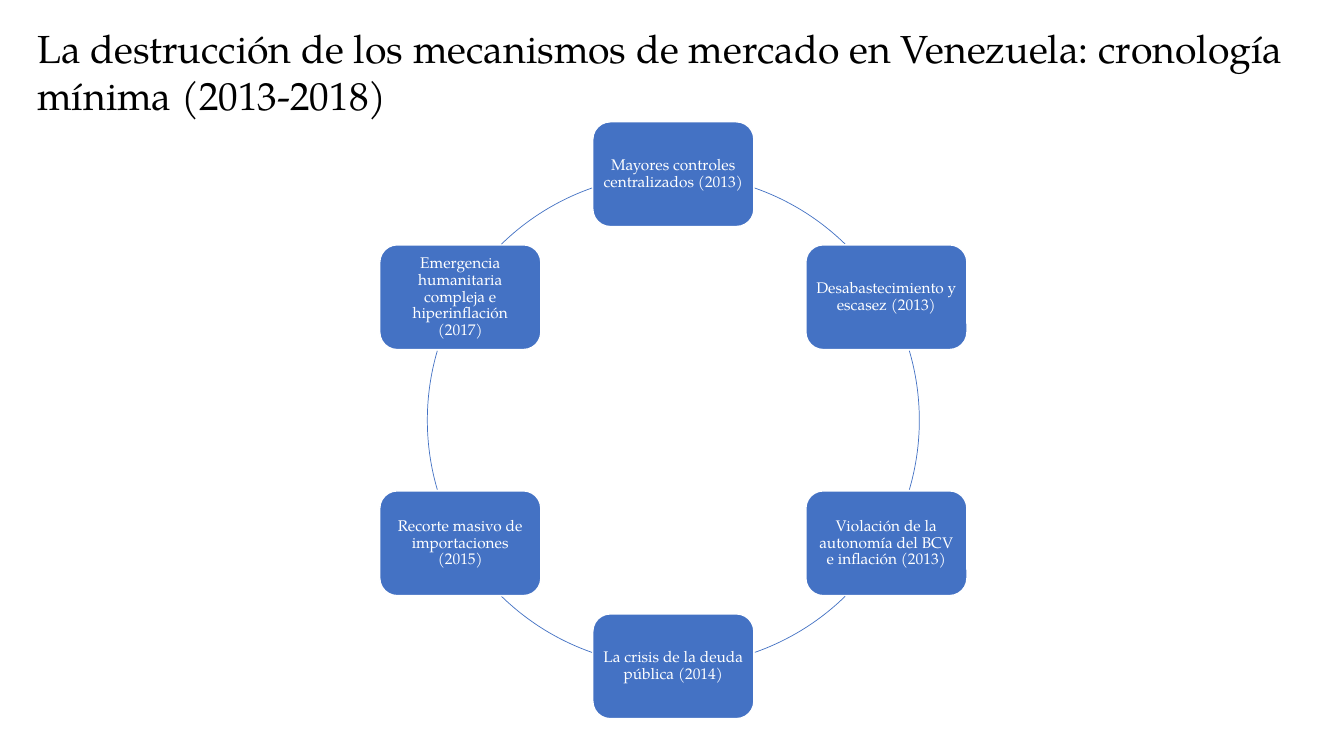
from math import cos, radians, sin

from pptx import Presentation
from pptx.dml.color import RGBColor
from pptx.enum.shapes import MSO_SHAPE as Shape
from pptx.enum.text import MSO_ANCHOR as Anchor, MSO_AUTO_SIZE as AutoSize, PP_ALIGN as Align
from pptx.util import Cm, Pt

COLORS = {"blue": "4472C4", "white": "FFFFFF", "black": "000000"}
FONT = "TeX Gyre Pagella"


def color(name):
    return RGBColor.from_string(COLORS[name])


def format_text(frame, size, color_name, align, anchor):
    frame.word_wrap = True
    frame.auto_size = AutoSize.NONE
    frame.vertical_anchor = anchor
    paragraph = frame.paragraphs[0]
    paragraph.alignment = align
    font = paragraph.runs[0].font
    font.name, font.size = FONT, Pt(size)
    font.color.rgb = color(color_name)


prs = Presentation()
prs.slide_width, prs.slide_height = Cm(33.87), Cm(19.05)
slide = prs.slides.add_slide(prs.slide_layouts[5])

# Title
title = slide.shapes.title
title.left, title.top, title.width, title.height = Cm(0.69), Cm(0.48), Cm(32.56), Cm(2.64)
title.text_frame.text = (
    "La destrucción de los mecanismos de mercado en Venezuela: cronología mínima (2013-2018)"
)
format_text(title.text_frame, 28, "black", Align.LEFT, Anchor.TOP)

# Cycle: events run clockwise from the top, each with the arc that follows it
events = [
    "Mayores controles centralizados (2013)",
    "Desabastecimiento y escasez (2013)",
    "Violación de la autonomía del BCV e inflación (2013)",
    "La crisis de la deuda pública (2014)",
    "Recorte masivo de importaciones (2015)",
    "Emergencia humanitaria compleja e hiperinflación (2017)",
]
arc_spans = [(289.3, 314.3), (343.6, 16.4), (45.7, 70.7),
             (109.3, 134.3), (163.6, 196.4), (225.7, 250.7)]
center_x, center_y, radius = 16.97, 10.59, 6.2
box_width, box_height = 4.06, 2.64

for index, (event, span) in enumerate(zip(events, arc_spans)):
    angle = radians(60 * index - 90)
    box = slide.shapes.add_shape(
        Shape.ROUNDED_RECTANGLE,
        Cm(center_x + radius * cos(angle) - box_width / 2),
        Cm(center_y + radius * sin(angle) - box_height / 2),
        Cm(box_width), Cm(box_height),
    )
    box.shadow.inherit = False
    box.fill.solid()
    box.fill.fore_color.rgb = color("blue")
    box.line.color.rgb = color("white")
    box.line.width = Pt(1)
    frame = box.text_frame
    frame.text = event
    frame.margin_left = frame.margin_right = Cm(0.12)
    frame.margin_top = frame.margin_bottom = Cm(0.12)
    format_text(frame, 11, "white", Align.CENTER, Anchor.MIDDLE)
    frame.paragraphs[0].line_spacing = 0.9

    arc = slide.shapes.add_shape(
        Shape.ARC, Cm(center_x - radius), Cm(center_y - radius), Cm(2 * radius), Cm(2 * radius)
    )
    arc.shadow.inherit = False
    arc.fill.background()
    arc.line.color.rgb = color("blue")
    arc.line.width = Pt(0.5)
    # One degree is 60000 units, and adjustments count in 100000 units
    for end, degrees in enumerate(span):
        arc.adjustments[end] = degrees * 0.6

prs.save("out.pptx")
